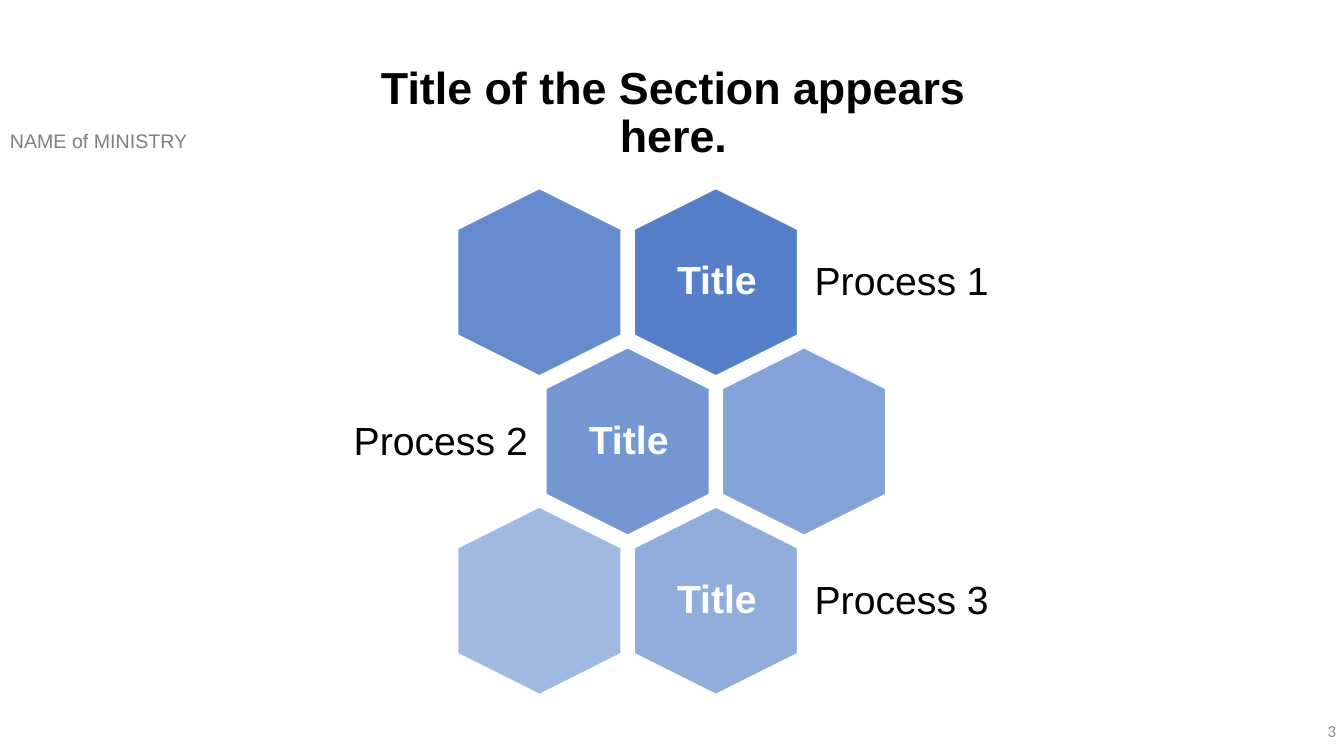
from dataclasses import dataclass

import pptx
import pptx.dml.color
import pptx.enum.shapes
import pptx.enum.text
import pptx.oxml.ns
import pptx.util
from lxml import etree

Inches = pptx.util.Inches
Align = pptx.enum.text.PP_ALIGN
Anchor = pptx.enum.text.MSO_ANCHOR

BLUE = "4472C4"
WHITE = "FFFFFF"
BLACK = "000000"

# Honeycomb: centre of the top left cell, pitch and cell size
FIRST_X, FIRST_Y = 5.35, 2.8
COLUMN_PITCH, ROW_PITCH = 1.75, 1.58
CELL_LENGTH, CELL_BREADTH = 1.86, 1.62


@dataclass(frozen=True)
class Cell:
    row: int
    column: int
    opacity: int
    process: str = ""


CELLS = [
    Cell(0, 1, 90, "Process 1"),
    Cell(0, 0, 82),
    Cell(1, 0, 74, "Process 2"),
    Cell(1, 1, 66),
    Cell(2, 1, 58, "Process 3"),
    Cell(2, 0, 50),
]


def rgb(code: str) -> pptx.dml.color.RGBColor:
    return pptx.dml.color.RGBColor.from_string(code)


def write(shape, text: str, *, size: float, color: str = BLACK, font: str = "Arial",
          bold: bool = False, align=Align.LEFT, anchor=Anchor.TOP,
          inset: float | None = None, spacing: float = 1.0) -> None:
    frame = shape.text_frame
    frame.word_wrap = True
    frame.auto_size = pptx.enum.text.MSO_AUTO_SIZE.NONE
    frame.vertical_anchor = anchor
    if inset is not None:
        frame.margin_left = frame.margin_right = Inches(inset)
        frame.margin_top = frame.margin_bottom = Inches(inset)
    paragraph = frame.paragraphs[0]
    paragraph.alignment = align
    paragraph.line_spacing = spacing
    run = paragraph.add_run()
    run.text = text
    run.font.size = pptx.util.Pt(size)
    run.font.name = font
    run.font.bold = bold
    run.font.color.rgb = rgb(color)


def add_text(slide, left: float, top: float, width: float, height: float,
             text: str, **style) -> None:
    box = slide.shapes.add_textbox(Inches(left), Inches(top), Inches(width), Inches(height))
    write(box, text, **style)


def draw_cell(slide, cell: Cell) -> None:
    shifted = cell.row % 2 == 1
    x = FIRST_X + (cell.column + (0.5 if shifted else 0)) * COLUMN_PITCH
    y = FIRST_Y + cell.row * ROW_PITCH

    # Upright hexagon with a translucent fill
    hexagon = slide.shapes.add_shape(
        pptx.enum.shapes.MSO_SHAPE.HEXAGON,
        Inches(x - CELL_LENGTH / 2), Inches(y - CELL_BREADTH / 2),
        Inches(CELL_LENGTH), Inches(CELL_BREADTH))
    hexagon.rotation = 90
    hexagon.adjustments[0] = 0.25
    hexagon.shadow.inherit = False
    hexagon.fill.solid()
    hexagon.fill.fore_color.rgb = rgb(BLUE)
    hexagon.line.color.rgb = rgb(WHITE)
    hexagon.line.width = pptx.util.Pt(1)
    qn = pptx.oxml.ns.qn
    color = hexagon.fill._xPr.find(qn("a:solidFill")).find(qn("a:srgbClr"))
    etree.SubElement(color, qn("a:alpha"), val=str(cell.opacity * 1000))

    # Title inside, process name on the outer side
    if cell.process:
        style = dict(size=28, anchor=Anchor.MIDDLE, inset=0.12, spacing=0.9)
        add_text(slide, x - 0.55, y - 0.64, 1.12, 1.28, "Title",
                 color=WHITE, bold=True, align=Align.CENTER, **style)
        left, width = (x - 2.88, 2.01) if shifted else (x + 0.86, 2.08)
        add_text(slide, left, y - 0.55, width, 1.12, cell.process,
                 align=Align.RIGHT if shifted else Align.LEFT, **style)


def main() -> None:
    presentation = pptx.Presentation()
    presentation.slide_width = Inches(13.33)
    presentation.slide_height = Inches(7.5)
    slide = presentation.slides.add_slide(presentation.slide_layouts[5])

    # Section title
    section_title = slide.shapes.title
    section_title.left, section_title.top = Inches(3.28), Inches(0.6)
    section_title.width, section_title.height = Inches(6.8), Inches(1.07)
    write(section_title, "Title of the Section appears here.", size=32, bold=True,
          align=Align.CENTER, spacing=0.9)

    # Ministry name
    add_text(slide, 0, 1.23, 2.9, 0.34, "NAME of MINISTRY", size=14, color="808080")

    # Honeycomb of processes
    for cell in CELLS:
        draw_cell(slide, cell)

    # Page number
    add_text(slide, 10.35, 7.05, 3, 0.4, "3", size=12, color="8C8C8C", font="Calibri",
             align=Align.RIGHT, anchor=Anchor.MIDDLE)

    presentation.save("out.pptx")


if __name__ == "__main__":
    main()
